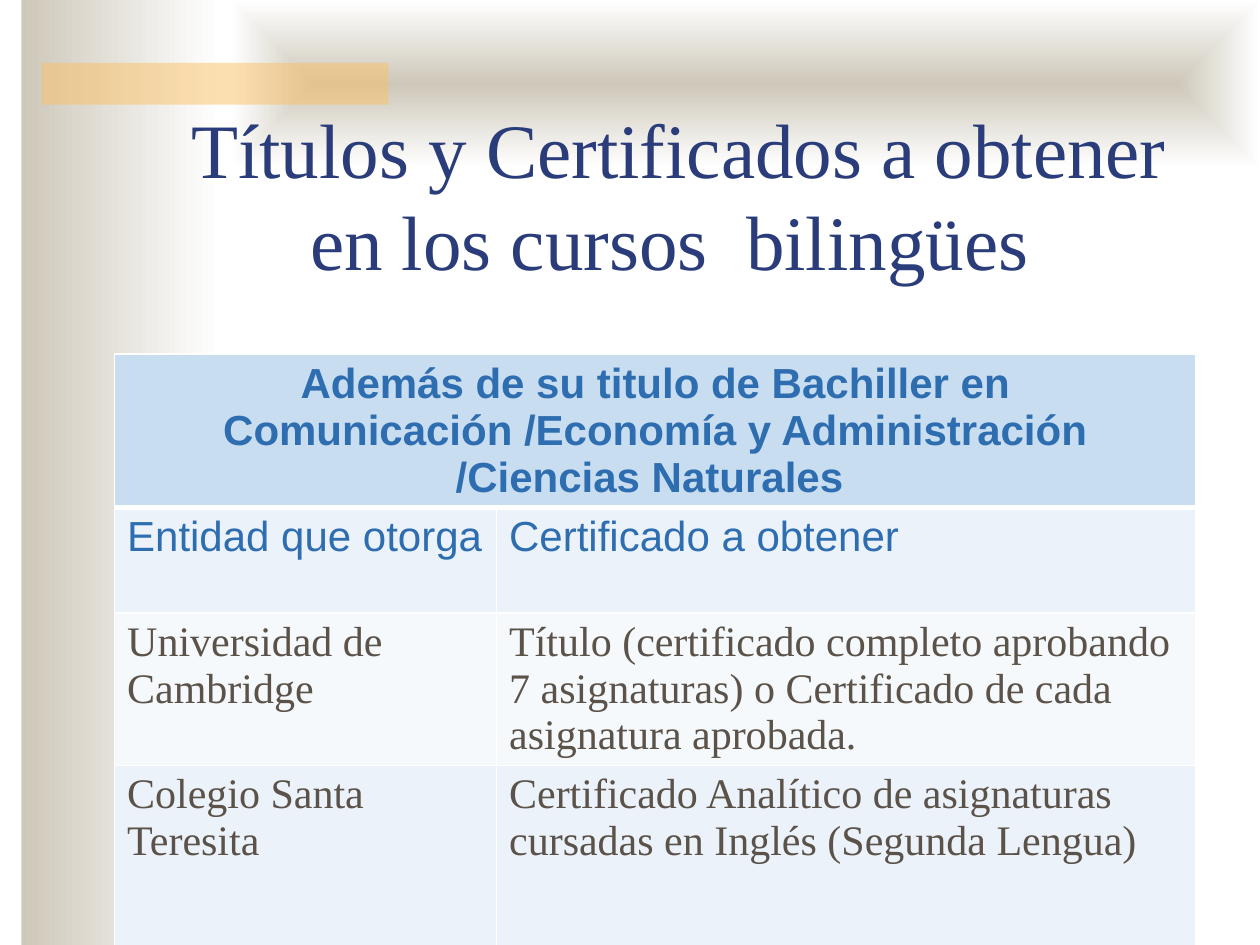
from lxml.etree import SubElement as Sub
from pptx import Presentation as Deck
from pptx.dml.color import RGBColor as Rgb
from pptx.enum.shapes import MSO_SHAPE as Kind
from pptx.enum.text import MSO_ANCHOR as Anchor, MSO_AUTO_SIZE as Fit, PP_ALIGN as Align
from pptx.oxml import parse_xml as read
from pptx.oxml.ns import nsdecls, qn
from pptx.util import Cm, Pt

SAND = Rgb(0xCE, 0xC8, 0xBA)
WHITE = Rgb(0xFF, 0xFF, 0xFF)
GOLD = Rgb(0xFA, 0xC1, 0x64)
NAVY = Rgb(0x2A, 0x3D, 0x7A)
BLUE = Rgb(0x2E, 0x6E, 0xB0)
BROWN = Rgb(0x5B, 0x52, 0x49)
SKY = Rgb(0xC9, 0xDD, 0xF1)
PALE = Rgb(0xEB, 0xF2, 0xFA)
ICE = Rgb(0xF5, 0xF9, 0xFC)
SERIF, SANS = "Times New Roman", "Arial"

HEAD = ("Además de su titulo de Bachiller en Comunicación "
        "/Economía y Administración /Ciencias Naturales ")
ROWS = [
    ("Entidad que otorga", "Certificado a obtener"),
    ("Universidad de Cambridge",
     "Título (certificado completo aprobando 7 asignaturas) "
     "o Certificado de cada asignatura aprobada."),
    ("Colegio Santa Teresita",
     "Certificado Analítico de asignaturas cursadas en Inglés (Segunda Lengua)"),
]


def write(frame, text, font=SERIF, size=24, color=BROWN, bold=False, align=Align.LEFT):
    """Put text in a frame; a vertical tab breaks the line."""
    frame.word_wrap = True
    par = frame.paragraphs[0]
    par.text = text
    par.alignment = align
    for run in par.runs:
        face = run.font
        face.name, face.size, face.bold = font, Pt(size), bold
        face.color.rgb = color


def block(slide, *box):
    """Add a plain rectangle, placed in cm."""
    shape = slide.shapes.add_shape(Kind.RECTANGLE, *map(Cm, box))
    shape.shadow.inherit = False
    shape.line.fill.background()
    return shape


def fade(shape, core=False):
    """Fade from sand to white, to the right or out from the core."""
    fill = shape.fill
    fill.gradient()
    fill.gradient_angle = 0
    for stop, color, pos in zip(fill.gradient_stops, (SAND, WHITE), (0, 1)):
        stop.color.rgb, stop.position = color, pos
    if core:
        grad = shape.element.spPr.find(qn("a:gradFill"))
        lin = grad.find(qn("a:lin"))
        grad.replace(lin, read(
            f'<a:path {nsdecls("a")} path="rect">'
            '<a:fillToRect l="50000" t="50000" r="50000" b="50000"/></a:path>'))


def tint(shape, color, alpha):
    """Fill a shape with a see-through colour."""
    shape.fill.solid()
    shape.fill.fore_color.rgb = color
    tone = shape.element.spPr.find(f'{qn("a:solidFill")}/{qn("a:srgbClr")}')
    Sub(tone, qn("a:alpha"), val=str(alpha * 1000))


def edge(cell, **wide):
    """Draw white cell borders, 1 pt unless a side is given its own width."""
    props = cell._tc.get_or_add_tcPr()
    for at, side in enumerate("LRTB"):
        width = Pt(wide.get(side, 1))
        props.insert(at, read(
            f'<a:ln{side} {nsdecls("a")} w="{width}"><a:solidFill>'
            f'<a:srgbClr val="{WHITE}"/></a:solidFill></a:ln{side}>'))


def paint(cell, color):
    cell.fill.solid()
    cell.fill.fore_color.rgb = color


def title(slide):
    shape = slide.shapes.title
    shape.left, shape.top, shape.width, shape.height = map(Cm, (2.9, 2.72, 21.59, 3.18))
    frame = shape.text_frame
    frame.auto_size = Fit.NONE
    frame.vertical_anchor = Anchor.BOTTOM
    write(frame, "Títulos y Certificados a obtener\ven los cursos  bilingües ",
          size=44, color=NAVY, align=Align.CENTER)
    slide.shapes._spTree.append(shape.element)  # bring in front of the backdrop


def grid(slide):
    wide, high = (7.7, 14.1), (3.07, 2.13, 3.07, 5.26)
    box = map(Cm, (2.31, 7.14, sum(wide), sum(high)))
    table = slide.shapes.add_table(len(high), len(wide), *box).table
    table.first_row = table.horz_banding = False
    for col, size in zip(table.columns, wide):
        col.width = Cm(size)
    for row, size in zip(table.rows, high):
        row.height = Cm(size)

    # Heading across both columns
    top = table.cell(0, 0)
    top.merge(table.cell(0, 1))
    write(top.text_frame, HEAD, font=SANS, color=BLUE, bold=True, align=Align.CENTER)
    for cell in table.rows[0].cells:
        paint(cell, SKY)
        edge(cell, B=3)

    # Column names, then the certificates
    looks = [(PALE, SANS, BLUE), (ICE, SERIF, BROWN), (PALE, SERIF, BROWN)]
    for y, (texts, (back, font, color)) in enumerate(zip(ROWS, looks), 1):
        for x, text in enumerate(texts):
            cell = table.cell(y, x)
            write(cell.text_frame, text, font=font, color=color)
            paint(cell, back)
            edge(cell, T=3 if y == 1 else 1)


def main():
    deck = Deck()
    deck.slide_width, deck.slide_height = Cm(25.4), Cm(19.05)
    slide = deck.slides.add_slide(deck.slide_layouts[5])

    # Backdrop
    fade(block(slide, 0.43, 0, 4.01, 19.05))
    fade(block(slide, 4.65, 0, 20.75, 3.38), core=True)
    tint(block(slide, 0.84, 1.27, 6.99, 0.84), GOLD, 50)

    title(slide)
    grid(slide)
    deck.save("out.pptx")


if __name__ == "__main__":
    main()
